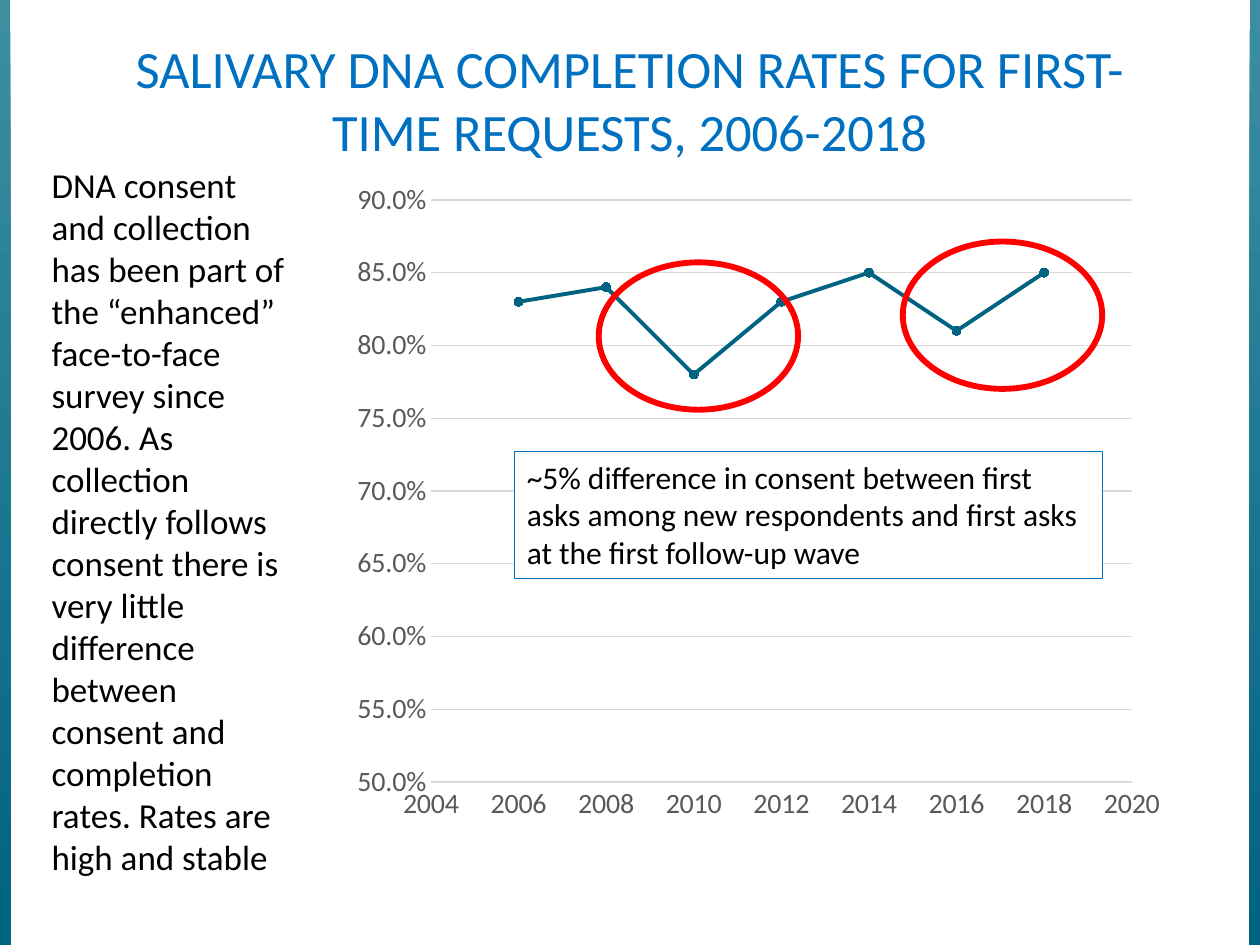
from lxml import etree
from pptx import Presentation
from pptx import util as u
from pptx.chart import data as chart_data
from pptx.dml import color
from pptx.enum import chart as chart_enum, shapes, text
from pptx.oxml import ns

THEME = {
    "font": "Calibri",
    "blue": "0070C0", "teal": "006382", "light_teal": "3C8EA1", "red": "FF0000",
    "black": "000000", "white": "FFFFFF", "axis": "595959", "grid": "D9D9D9",
    "title": 30, "body": 20, "note": 18, "label": 16,
}

TITLE = "SALIVARY DNA COMPLETION RATES FOR FIRST-TIME REQUESTS, 2006-2018"
BODY = ("DNA consent and collection has been part of the “enhanced” face-to-face "
        "survey since 2006. As collection directly follows consent there is very "
        "little difference between consent and completion rates. Rates are high "
        "and stable")
NOTE = ("~5% difference in consent between first asks among new respondents and "
        "first asks at the first follow-up wave")
RATES = {2006: 0.83, 2008: 0.84, 2010: 0.78, 2012: 0.83,
         2014: 0.85, 2016: 0.81, 2018: 0.85}
AXES = {
    "category_axis": {"minimum_scale": 2004, "maximum_scale": 2020, "major_unit": 2,
                      "has_major_gridlines": False},
    "value_axis": {"minimum_scale": 0.5, "maximum_scale": 0.9, "major_unit": 0.05,
                   "has_major_gridlines": True},
}
NUMBER_FORMATS = {"category_axis": "0", "value_axis": "0.0%"}
PLOT_AREA = {"x": 0.117, "y": 0.031, "w": 0.819, "h": 0.867}

# Left, top, width, height in centimetres
SLIDE_SIZE = (25.4, 19.05)
EDGE_WIDTH = 0.21
TITLE_BOX = (1.75, 0.58, 21.9, 1.3)
BODY_BOX = (0.79, 3.17, 5.33, 14.78)
CHART_BOX = (6.67, 3.61, 17.25, 13.54)
NOTE_BOX = (10.37, 9.1, 11.86, 2.56)
RING_SIZE = (4.02, 2.97)
RING_CORNERS = [(12.07, 5.29), (18.2, 4.87)]


def cm(box):
    return [u.Cm(value) for value in box]


def rgb(name):
    return color.RGBColor.from_string(THEME[name])


def set_values(target, values):
    for name, value in values.items():
        setattr(target, name, value)


def style_font(font, size, color_name):
    set_values(font, {"name": THEME["font"], "size": u.Pt(THEME[size]), "bold": False})
    font.color.rgb = rgb(color_name)


def style_line(line, color_name, width):
    line.color.rgb = rgb(color_name)
    line.width = u.Pt(width)


def write(shape, words, size, color_name, align=text.PP_ALIGN.LEFT, **frame_format):
    set_values(shape.text_frame, {"word_wrap": True,
                                  "vertical_anchor": text.MSO_ANCHOR.TOP,
                                  **frame_format})
    paragraph = shape.text_frame.paragraphs[0]
    paragraph.alignment = align
    run = paragraph.add_run()
    run.text = words
    style_font(run.font, size, color_name)


def add_plain_shape(slide, kind, box):
    shape = slide.shapes.add_shape(kind, *cm(box))
    shape.shadow.inherit = False
    return shape


def add_edges(slide):
    width, height = SLIDE_SIZE
    for left in (0, width - EDGE_WIDTH):
        edge = add_plain_shape(slide, shapes.MSO_SHAPE.RECTANGLE,
                               (left, 0, EDGE_WIDTH, height))
        edge.line.fill.background()
        edge.fill.gradient()
        edge.fill.gradient_angle = 260
        for stop, name, position in zip(edge.fill.gradient_stops,
                                        ("light_teal", "teal"), (0, 1)):
            stop.color.rgb = rgb(name)
            stop.position = position


def fix_plot_area(chart):
    """Place the inner plot area by fractions of the chart's size."""
    plot_area = chart._chartSpace.chart.plotArea
    for old in plot_area.findall(ns.qn("c:layout")):
        plot_area.remove(old)
    layout = etree.Element(ns.qn("c:layout"))
    manual = etree.SubElement(layout, ns.qn("c:manualLayout"))
    settings = {"layoutTarget": "inner", "xMode": "edge", "yMode": "edge", **PLOT_AREA}
    for name, value in settings.items():
        etree.SubElement(manual, ns.qn(f"c:{name}")).set("val", str(value))
    plot_area.insert(0, layout)


def add_rate_chart(slide):
    rates = chart_data.XyChartData(number_format="0.0%")
    points = rates.add_series("Series 1")
    for year, rate in RATES.items():
        points.add_data_point(year, rate)
    chart = slide.shapes.add_chart(chart_enum.XL_CHART_TYPE.XY_SCATTER_LINES,
                                   *cm(CHART_BOX), rates).chart
    set_values(chart, {"has_legend": False, "has_title": False})
    style_font(chart.font, "label", "black")
    chart.plots[0].vary_by_categories = False

    for name, values in AXES.items():
        axis = getattr(chart, name)
        set_values(axis, {"major_tick_mark": chart_enum.XL_TICK_MARK.NONE,
                          "minor_tick_mark": chart_enum.XL_TICK_MARK.NONE, **values})
        set_values(axis.tick_labels, {"number_format": NUMBER_FORMATS[name],
                                      "number_format_is_linked": False})
        style_font(axis.tick_labels.font, "label", "axis")
    style_line(chart.category_axis.format.line, "grid", 0.75)
    style_line(chart.value_axis.major_gridlines.format.line, "grid", 0.75)
    chart.value_axis.format.line.fill.background()

    series = chart.plots[0].series[0]
    series.smooth = False
    style_line(series.format.line, "teal", 2.25)
    set_values(series.marker, {"style": chart_enum.XL_MARKER_STYLE.CIRCLE, "size": 5})
    series.marker.format.fill.solid()
    series.marker.format.fill.fore_color.rgb = rgb("teal")
    style_line(series.marker.format.line, "teal", 0.75)
    fix_plot_area(chart)


def add_note(slide):
    note = add_plain_shape(slide, shapes.MSO_SHAPE.RECTANGLE, NOTE_BOX)
    note.fill.solid()
    note.fill.fore_color.rgb = rgb("white")
    style_line(note.line, "blue", 0.75)
    write(note, NOTE, "note", "black", auto_size=text.MSO_AUTO_SIZE.SHAPE_TO_FIT_TEXT)


def add_rings(slide):
    for corner in RING_CORNERS:
        ring = add_plain_shape(slide, shapes.MSO_SHAPE.OVAL, corner + RING_SIZE)
        ring.fill.background()
        style_line(ring.line, "red", 3.35)


def main():
    presentation = Presentation()
    presentation.slide_width, presentation.slide_height = cm(SLIDE_SIZE)
    slide = presentation.slides.add_slide(presentation.slide_layouts[6])
    add_edges(slide)
    write(slide.shapes.add_textbox(*cm(TITLE_BOX)), TITLE, "title", "blue",
          text.PP_ALIGN.CENTER, margin_top=u.Cm(0.15))
    write(slide.shapes.add_textbox(*cm(BODY_BOX)), BODY, "body", "black",
          auto_size=text.MSO_AUTO_SIZE.SHAPE_TO_FIT_TEXT)
    add_rate_chart(slide)
    add_note(slide)
    add_rings(slide)
    presentation.save("out.pptx")


if __name__ == "__main__":
    main()
